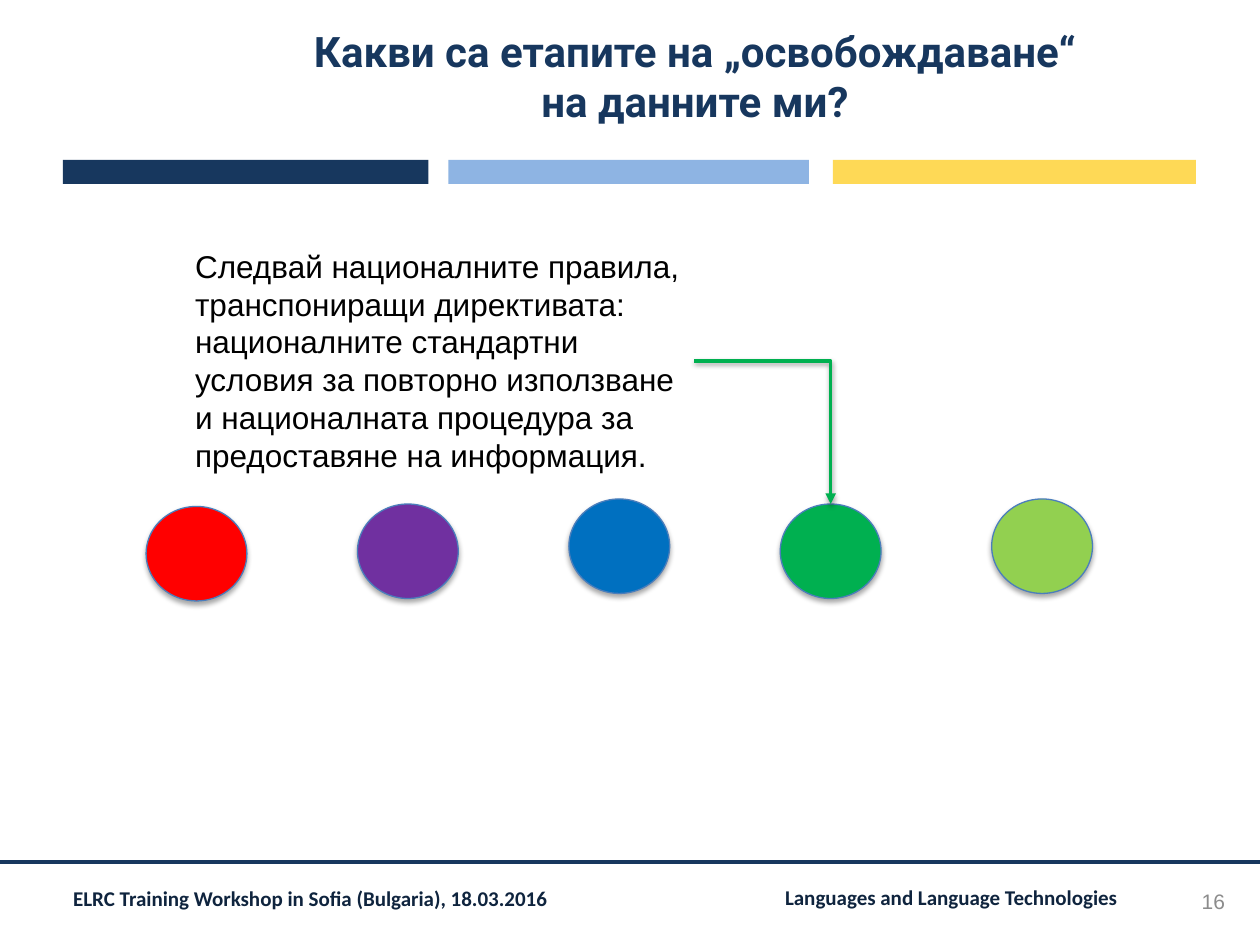
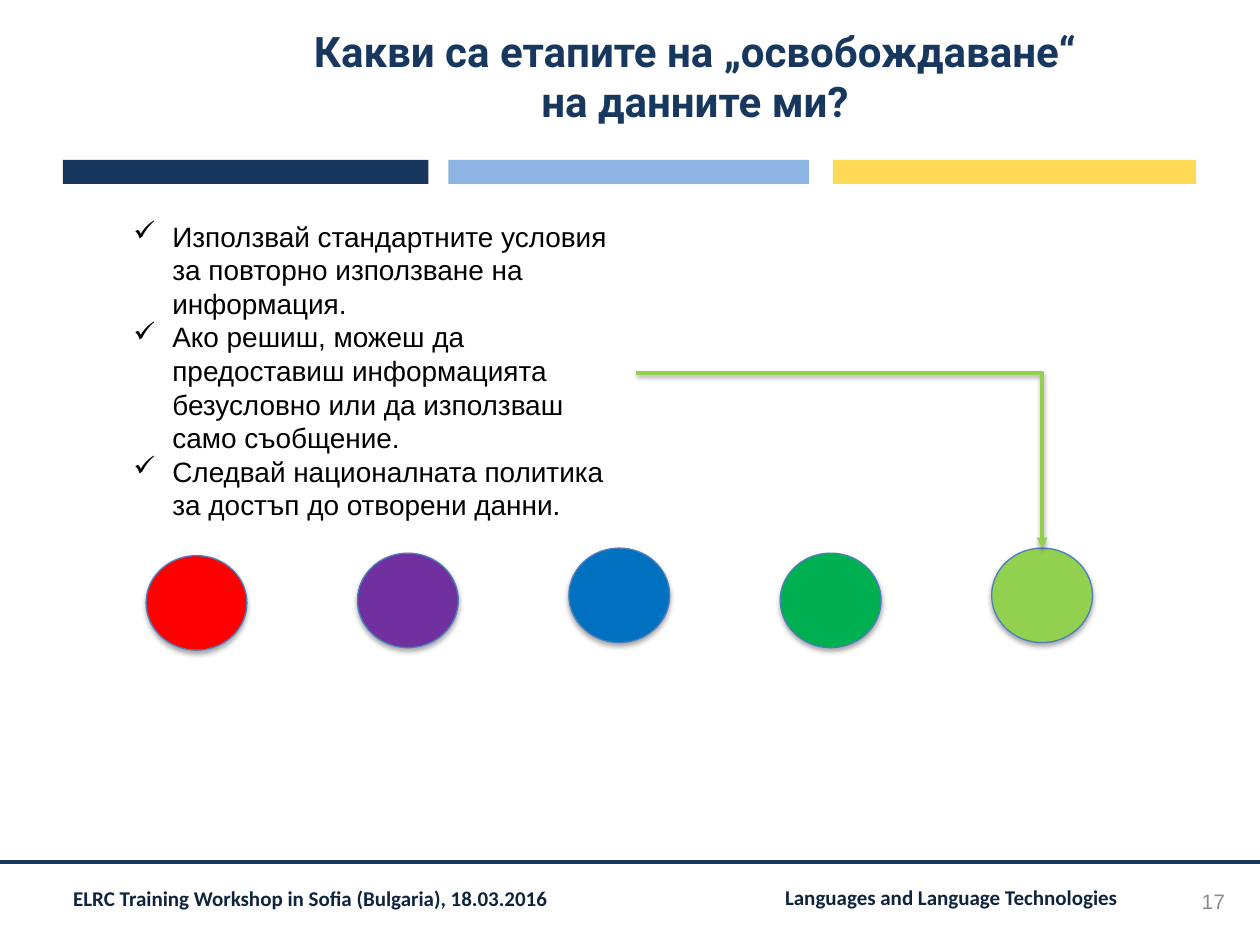
"""Build two slides on the stages of releasing data, with shared bands, title and footer."""
from dataclasses import dataclass

import lxml.etree
import pptx
import pptx.dml.color
import pptx.enum.shapes
import pptx.enum.text
import pptx.oxml.ns
import pptx.util

Pt = pptx.util.Pt
qn = pptx.oxml.ns.qn
SHAPE = pptx.enum.shapes.MSO_SHAPE
ALIGN = pptx.enum.text.PP_ALIGN
ANCHOR = pptx.enum.text.MSO_ANCHOR

NAVY, SKY, YELLOW = "17375E", "8EB4E3", "FED956"
FOOTER_INK, NUMBER_GREY, BLACK, OUTLINE = "0F243E", "8C8C8C", "000000", "4B7EBC"
RED, PURPLE, BLUE, GREEN, LIME = "FF0000", "7030A0", "0070C0", "00B050", "92D050"

TITLE = "Какви са етапите на „освобождаване“ на данните ми?"
WIDTH, HEIGHT = 720, 540
BAND_TOP, BAND_HEIGHT = 91.4, 13.7
RULE_TOP = 492.5
STAGE_LEFT, STAGE_STEP = 83.5, 120.8
STAGE_WIDTH, STAGE_HEIGHT = 57.6, 54


@dataclass(frozen=True)
class Frame:
    """A rectangle in points."""
    left: float
    top: float
    width: float
    height: float

    def lengths(self) -> list[pptx.util.Length]:
        """Return the four measures as lengths."""
        return [Pt(value) for value in (self.left, self.top, self.width, self.height)]


@dataclass(frozen=True)
class Band:
    """One coloured strip below the title."""
    left: float
    width: float
    color: str


@dataclass(frozen=True)
class Stage:
    """One circle in the row, with its drop below the row's top."""
    color: str
    drop: float


@dataclass(frozen=True)
class Advice:
    """The content of one slide: advice pointing at one stage."""
    number: int
    frame: Frame
    paragraphs: tuple[str, ...]
    size: float
    hanging: float
    row_top: float
    target: int
    arrow_left: float
    arrow_top: float


BANDS = (Band(36, 208.8, NAVY), Band(256.3, 205.9, SKY), Band(475.9, 207.4, YELLOW))
STAGES = (Stage(RED, 4.3), Stage(PURPLE, 2.9), Stage(BLUE, 0), Stage(GREEN, 2.9), Stage(LIME, 0))
FOOTERS = (
    (Frame(36, 504.7, 339.8, 19.4), "ELRC Training Workshop in Sofia (Bulgaria), 18.03.2016"),
    (Frame(442.8, 504, 212.4, 18.7), "Languages and Language Technologies"),
)
ADVICE = (
    Advice(16, Frame(104.4, 137.5, 291.6, 138.2), (
        "Следвай националните правила, транспониращи директивата: националните стандартни "
        "условия за повторно използване и националната процедура за предоставяне на информация.",
    ), size=18, hanging=0, row_top=285.1, target=3, arrow_left=396.7, arrow_top=206.4),
    Advice(17, Frame(69.1, 121.7, 294.5, 181.4), (
        "Използвай стандартните условия за повторно използване на информация.",
        "Ако решиш, можеш да предоставиш информацията безусловно или да използваш само съобщение.",
        "Следвай националната политика за достъп до отворени данни.",
    ), size=16, hanging=22.3, row_top=313.2, target=4, arrow_left=363.6, arrow_top=213),
)


def rgb(color: str) -> pptx.dml.color.RGBColor:
    """Turn a hex string into a colour."""
    return pptx.dml.color.RGBColor.from_string(color)


def add_child(parent, tag: str, **attributes):
    """Append an XML element with the given attributes."""
    return lxml.etree.SubElement(parent, qn(tag), {key: str(value) for key, value in attributes.items()})


def add_shadow(effects, distance: float, opacity: int) -> None:
    """Put a soft downward shadow in an effect list."""
    outer = add_child(effects, "a:outerShdw", blurRad=int(Pt(3.1)), dist=int(Pt(distance)),
                      dir=5400000, rotWithShape=0)
    add_child(add_child(outer, "a:srgbClr", val=BLACK), "a:alpha", val=opacity * 1000)


def add_text(page, frame: Frame, *texts: str, size: float, font: str = "Arial", color: str = BLACK,
             bold: bool = False, align=ALIGN.LEFT, anchor=ANCHOR.TOP,
             insets: tuple[float, float] = (7.2, 3.6), spacing: float = 1.0, hanging: float = 0) -> None:
    """Add a text box, with check marks when a hanging indent is given."""
    box = page.shapes.add_textbox(*frame.lengths()).text_frame
    box.word_wrap = True
    box.vertical_anchor = anchor
    box.margin_left = box.margin_right = Pt(insets[0])
    box.margin_top = box.margin_bottom = Pt(insets[1])
    for index, text in enumerate(texts):
        para = box.add_paragraph() if index else box.paragraphs[0]
        para.alignment = align
        para.line_spacing = spacing
        if hanging:
            properties = para._p.get_or_add_pPr()
            properties.set("marL", str(int(Pt(hanging))))
            properties.set("indent", str(-int(Pt(hanging))))
            add_child(properties, "a:buChar", char="✓")
        span = para.add_run()
        span.text = text
        span.font.name = font
        span.font.size = Pt(size)
        span.font.bold = bold
        span.font.color.rgb = rgb(color)


def add_solid(page, kind, frame: Frame, fill: str, line: str | None = None):
    """Add a filled preset shape with an optional thin outline."""
    shape = page.shapes.add_shape(kind, *frame.lengths())
    shape.shadow.inherit = False
    shape.fill.solid()
    shape.fill.fore_color.rgb = rgb(fill)
    if line:
        shape.line.color.rgb = rgb(line)
        shape.line.width = Pt(0.75)
    else:
        shape.line.fill.background()
    return shape


def add_line(page, kind, start: tuple[float, float], end: tuple[float, float], color: str, width: float):
    """Add a connector and return it with its empty effect list."""
    line = page.shapes.add_connector(kind, *(Pt(value) for value in start + end))
    line.line.color.rgb = rgb(color)
    line.line.width = Pt(width)
    return line, add_child(line._element.spPr, "a:effectLst")


def add_frame_parts(page, number: int) -> None:
    """Draw the bands, title, rule, footers and page number."""
    for band in BANDS:
        add_solid(page, SHAPE.RECTANGLE, Frame(band.left, BAND_TOP, band.width, BAND_HEIGHT), band.color)
    add_line(page, pptx.enum.shapes.MSO_CONNECTOR.STRAIGHT, (0, RULE_TOP), (WIDTH, RULE_TOP), NAVY, 2.25)
    for frame, text in FOOTERS:
        add_text(page, frame, text, size=12, font="Calibri", color=FOOTER_INK, bold=True,
                 insets=(5.8, 2.9), spacing=0.9)
    add_text(page, Frame(169.9, 10.1, 454.3, 66.2), TITLE, size=24, font="Roboto", color=NAVY,
             bold=True, align=ALIGN.CENTER, anchor=ANCHOR.MIDDLE, insets=(0, 0))
    add_text(page, Frame(539.3, 500.4, 167.8, 28.8), str(number), size=12, color=NUMBER_GREY,
             align=ALIGN.RIGHT, anchor=ANCHOR.MIDDLE)


def add_stages(page, row_top: float) -> None:
    """Draw the row of stage circles."""
    for index, stage in enumerate(STAGES):
        frame = Frame(STAGE_LEFT + index * STAGE_STEP, row_top + stage.drop, STAGE_WIDTH, STAGE_HEIGHT)
        circle = add_solid(page, SHAPE.OVAL, frame, stage.color, OUTLINE)
        add_shadow(circle._element.spPr.find(qn("a:effectLst")), 1.8, 35)


def add_arrow(page, advice: Advice) -> None:
    """Draw the bent arrow from the advice to its stage."""
    stage = STAGES[advice.target]
    end = (STAGE_LEFT + advice.target * STAGE_STEP + STAGE_WIDTH / 2, advice.row_top + stage.drop)
    arrow, effects = add_line(page, pptx.enum.shapes.MSO_CONNECTOR.ELBOW,
                              (advice.arrow_left, advice.arrow_top), end, stage.color, 2)
    properties = arrow._element.spPr
    properties.find(qn("a:prstGeom")).set("prst", "bentConnector2")
    add_child(properties.find(qn("a:ln")), "a:tailEnd", type="triangle")
    add_shadow(effects, 1.6, 38)


def main() -> None:
    """Build and save the deck."""
    deck = pptx.Presentation()
    deck.slide_width, deck.slide_height = Pt(WIDTH), Pt(HEIGHT)
    for advice in ADVICE:
        page = deck.slides.add_slide(deck.slide_layouts[6])
        add_frame_parts(page, advice.number)
        add_stages(page, advice.row_top)
        add_text(page, advice.frame, *advice.paragraphs, size=advice.size, hanging=advice.hanging)
        add_arrow(page, advice)
    deck.save("out.pptx")


if __name__ == "__main__":
    main()
